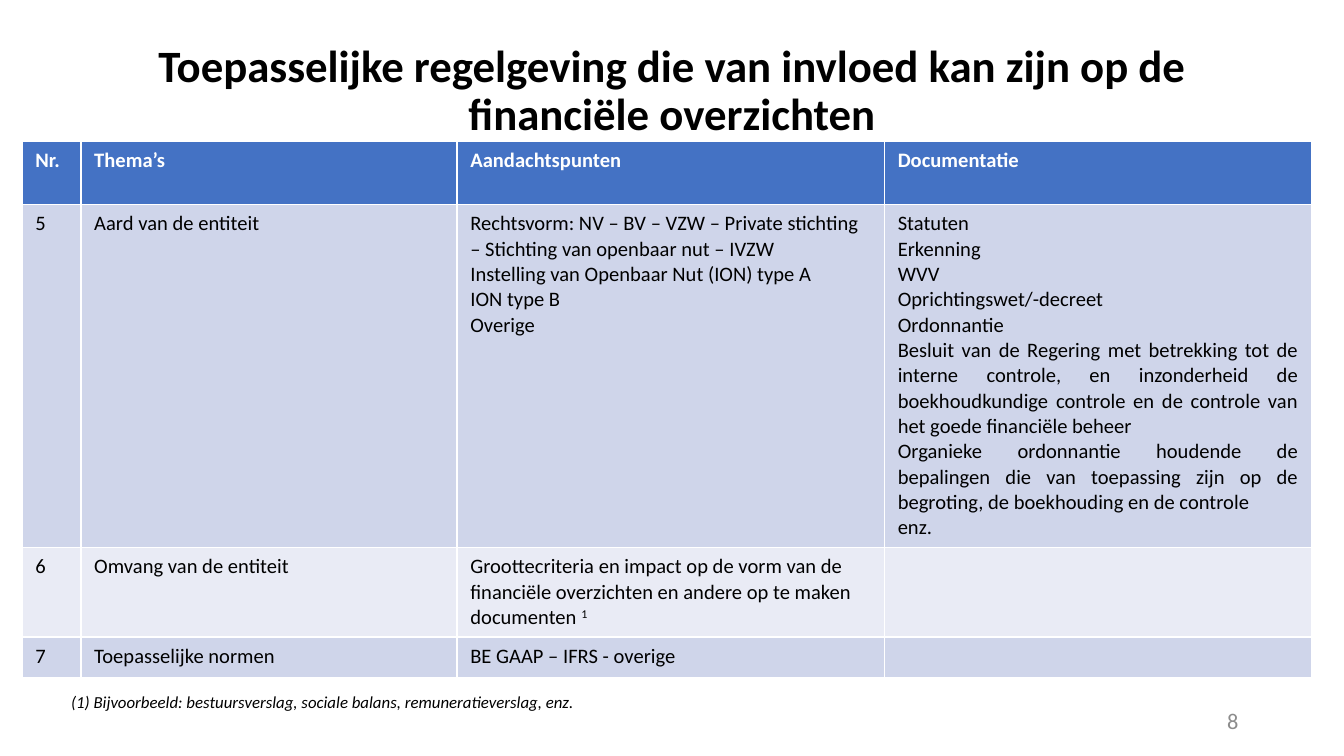
"""Build a slide with a table of rules that affect financial statements."""
from dataclasses import dataclass
from pptx import Presentation
from pptx.dml.color import RGBColor
from pptx.enum.text import MSO_ANCHOR, MSO_AUTO_SIZE, PP_ALIGN
from pptx.util import Pt

LEFT, MID, RIGHT, JUST = PP_ALIGN.LEFT, PP_ALIGN.CENTER, PP_ALIGN.RIGHT, PP_ALIGN.JUSTIFY
CENTER = MSO_ANCHOR.MIDDLE
FIXED = MSO_AUTO_SIZE.NONE


@dataclass(frozen=True)
class Theme:
    face: str = "Calibri"
    ink: str = "000000"
    white: str = "FFFFFF"
    gray: str = "8C8C8C"
    head: str = "4472C4"
    bands: tuple = ("CFD5EA", "E9EBF5")
    title: int = 24
    body: int = 11
    note: int = 9
    page: int = 12


theme = Theme()


def style(para, size, color, align=LEFT, bold=False, italic=False):
    para.alignment = align
    font = para.font
    font.name, font.size = theme.face, Pt(size)
    font.bold, font.italic = bold, italic
    font.color.rgb = RGBColor.from_string(color)


def place(shape, left, top, width, height):
    shape.left, shape.top = Pt(left), Pt(top)
    shape.width, shape.height = Pt(width), Pt(height)


deck = Presentation()
deck.slide_width, deck.slide_height = Pt(720), Pt(405)
slide = deck.slides.add_slide(deck.slide_layouts[5])

title = slide.shapes.title
place(title, 49.5, 10, 621, 78.5)
frame = title.text_frame
frame.text = "Toepasselijke regelgeving die van invloed kan zijn op de financiële overzichten"
frame.auto_size, frame.vertical_anchor = FIXED, CENTER
style(frame.paragraphs[0], theme.title, theme.ink, MID, bold=True)
frame.paragraphs[0].line_spacing = 0.9

rows = [
    (["Nr."], ["Thema’s"], ["Aandachtspunten"], ["Documentatie"]),
    (
        ["5"],
        ["Aard van de entiteit"],
        [
            "Rechtsvorm: NV – BV – VZW – Private stichting – Stichting van openbaar nut – IVZW",
            "Instelling van Openbaar Nut (ION) type A",
            "ION type B",
            "Overige",
        ],
        [
            "Statuten",
            "Erkenning",
            "WVV",
            "Oprichtingswet/-decreet",
            "Ordonnantie",
            "Besluit van de Regering met betrekking tot de interne controle, en inzonderheid "
            "de boekhoudkundige controle en de controle van het goede financiële beheer",
            "Organieke ordonnantie houdende de bepalingen die van toepassing zijn op de "
            "begroting, de boekhouding en de controle",
            "enz.",
        ],
    ),
    (
        ["6"],
        ["Omvang van de entiteit"],
        ["Groottecriteria en impact op de vorm van de financiële overzichten en andere "
         "op te maken documenten "],
        [],
    ),
    (["7"], ["Toepasselijke normen"], ["BE GAAP – IFRS - overige"], []),
]
widths = (31.5, 201.5, 229, 229)
heights = (34, 183, 48, 22)

table = slide.shapes.add_table(
    len(rows), len(widths), Pt(11.8), Pt(75.5), Pt(sum(widths)), Pt(sum(heights))
).table
for col, width in zip(table.columns, widths):
    col.width = Pt(width)
for row, height in zip(table.rows, heights):
    row.height = Pt(height)

for r, row in enumerate(rows):
    fill = theme.bands[(r - 1) % 2] if r else theme.head
    color = theme.ink if r else theme.white
    for c, lines in enumerate(row):
        cell = table.cell(r, c)
        cell.fill.solid()
        cell.fill.fore_color.rgb = RGBColor.from_string(fill)
        cell.text = "\n".join(lines)
        align = JUST if r and c == 3 else LEFT
        for para in cell.text_frame.paragraphs:
            style(para, theme.body, color, align, bold=r == 0)

mark = table.cell(2, 2).text_frame.paragraphs[0].add_run()
mark.text = "1"
mark._r.get_or_add_rPr().set("baseline", "30000")

labels = [
    ("8", (508.5, 375, 162, 21.6), theme.page, theme.gray, RIGHT, False),
    ("(1) Bijvoorbeeld: bestuursverslag, sociale balans, remuneratieverslag, enz.",
     (31, 367, 653, 29), theme.note, theme.ink, LEFT, True),
]
for text, box, size, color, align, italic in labels:
    frame = slide.shapes.add_textbox(*map(Pt, box)).text_frame
    frame.word_wrap = True
    frame.text = text
    if align == RIGHT:
        frame.vertical_anchor = CENTER
    style(frame.paragraphs[0], size, color, align, italic=italic)

deck.save("out.pptx")
